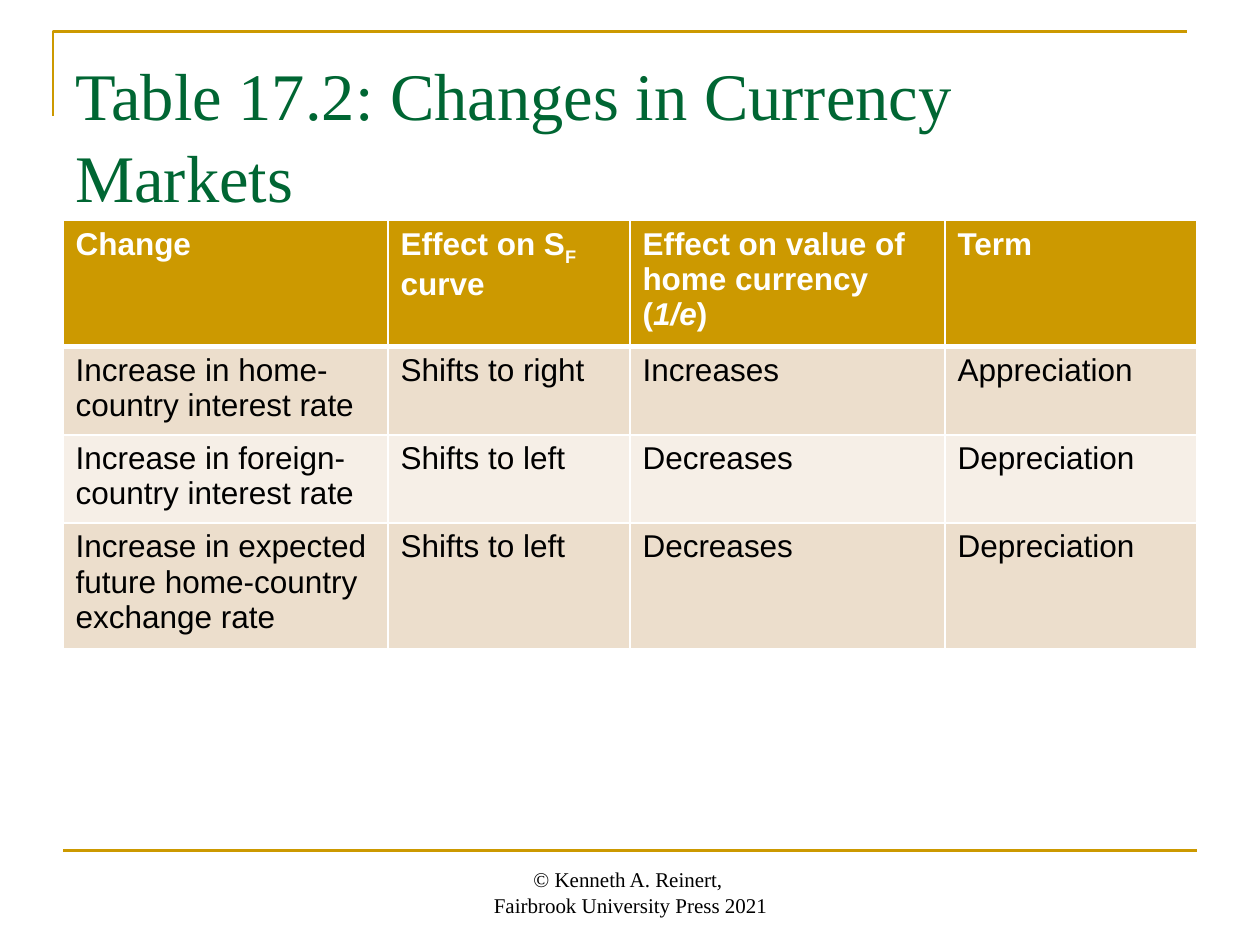
from dataclasses import dataclass

from lxml import etree
from pptx import Presentation
from pptx.dml.color import RGBColor
from pptx.enum.shapes import MSO_CONNECTOR as Connector
from pptx.enum.text import MSO_ANCHOR as Anchor, PP_ALIGN as Align
from pptx.oxml import parse_xml
from pptx.oxml.ns import nsdecls, qn
from pptx.util import Inches, Pt


@dataclass(frozen=True)
class Theme:
    gold: RGBColor = RGBColor(0xCC, 0x99, 0x00)
    green: RGBColor = RGBColor(0x00, 0x66, 0x33)
    black: RGBColor = RGBColor(0x00, 0x00, 0x00)
    white: RGBColor = RGBColor(0xFF, 0xFF, 0xFF)
    bands: tuple = (RGBColor(0xEC, 0xDE, 0xCC), RGBColor(0xF6, 0xEF, 0xE7))
    serif: str = "Times New Roman"
    sans: str = "Arial"
    title_size: int = 38
    table_size: int = 18
    footer_size: int = 12
    rule_width: float = 1.5


theme = Theme()


def write(frame, paragraphs, *, font, size, color, bold=False, align=Align.LEFT, spacing=None):
    """Fill a text frame; a paragraph is a string or a list of (text, style) runs."""
    frame.word_wrap = True
    for index, content in enumerate(paragraphs):
        paragraph = frame.paragraphs[0] if index == 0 else frame.add_paragraph()
        paragraph.alignment = align
        if spacing:
            paragraph.line_spacing = spacing
        runs = [(content, "")] if isinstance(content, str) else content
        for text, style in runs:
            run = paragraph.add_run()
            run.text = text
            run.font.name = font
            run.font.size = Pt(size)
            run.font.color.rgb = color
            run.font.bold = bold
            if style == "italic":
                run.font.italic = True
            if style == "subscript":
                run._r.get_or_add_rPr().set("baseline", "-25000")


def add_borders(cell, color, **widths):
    """Draw the cell's edges, given as L, R, T and B in points."""
    properties = cell._tc.get_or_add_tcPr()
    for side, width in widths.items():
        properties.append(parse_xml(
            f'<a:ln{side} {nsdecls("a")} w="{Pt(width)}"><a:solidFill>'
            f'<a:srgbClr val="{color}"/></a:solidFill></a:ln{side}>'))


prs = Presentation()
prs.slide_width, prs.slide_height = Inches(10), Inches(7.5)
slide = prs.slides.add_slide(prs.slide_layouts[6])
shapes = slide.shapes

# Gold frame lines
corner_path = shapes.build_freeform(Inches(0.42), Inches(0.92))
corner_path.add_line_segments(
    [(Inches(0.42), Inches(0.25)), (Inches(9.42), Inches(0.25))], close=False)
corner = corner_path.convert_to_shape()
corner.fill.background()
corner.shadow.inherit = False
footer_rule = shapes.add_connector(
    Connector.STRAIGHT, Inches(0.5), Inches(6.75), Inches(9.5), Inches(6.75))
etree.SubElement(footer_rule._element.spPr, qn("a:effectLst"))
for rule in (corner, footer_rule):
    rule.line.color.rgb = theme.gold
    rule.line.width = Pt(theme.rule_width)

# Title
title = shapes.add_textbox(Inches(0.5), Inches(0.3), Inches(9), Inches(1.25)).text_frame
title.margin_top = Inches(0.11)
write(title, ["Table 17.2: Changes in Currency Markets"], font=theme.serif,
      size=theme.title_size, color=theme.green, spacing=1.03)

# Table of changes
rows = [
    [["Change"],
     [[("Effect on S", ""), ("F", "subscript")], "curve"],
     [[("Effect on value of home currency (", ""), ("1/e", "italic"), (")", "")]],
     ["Term"]],
    [["Increase in home-country interest rate"],
     ["Shifts to right"], ["Increases"], ["Appreciation"]],
    [["Increase in foreign-country interest rate"],
     ["Shifts to left"], ["Decreases"], ["Depreciation"]],
    [["Increase in expected future home-country exchange rate"],
     ["Shifts to left"], ["Decreases"], ["Depreciation"]],
]
column_widths = [2.58, 1.92, 2.5, 2]
changes = shapes.add_table(len(rows), len(column_widths), Inches(0.5), Inches(1.75),
                           Inches(9), Inches(3.4))
for column, width in zip(changes.table.columns, column_widths):
    column.width = Inches(width)
for row in changes.table.rows:
    row.height = Inches(0.41)
changes.height = Inches(3.4)

for row_index, row in enumerate(rows):
    is_header = row_index == 0
    for column_index, paragraphs in enumerate(row):
        cell = changes.table.cell(row_index, column_index)
        add_borders(cell, theme.white, L=1, R=1,
                    T=3 if row_index == 1 else 1, B=3 if is_header else 1)
        cell.fill.solid()
        cell.fill.fore_color.rgb = theme.gold if is_header else theme.bands[(row_index - 1) % 2]
        write(cell.text_frame, paragraphs, font=theme.sans, size=theme.table_size,
              color=theme.white if is_header else theme.black, bold=is_header)

# Footer
footer = shapes.add_textbox(Inches(3.42), Inches(6.83), Inches(3.17), Inches(0.5)).text_frame
footer.vertical_anchor = Anchor.BOTTOM
write(footer, ["© Kenneth A. Reinert, ", "Fairbrook University Press 2021"],
      font=theme.serif, size=theme.footer_size, color=theme.black, align=Align.CENTER)

prs.save("out.pptx")
